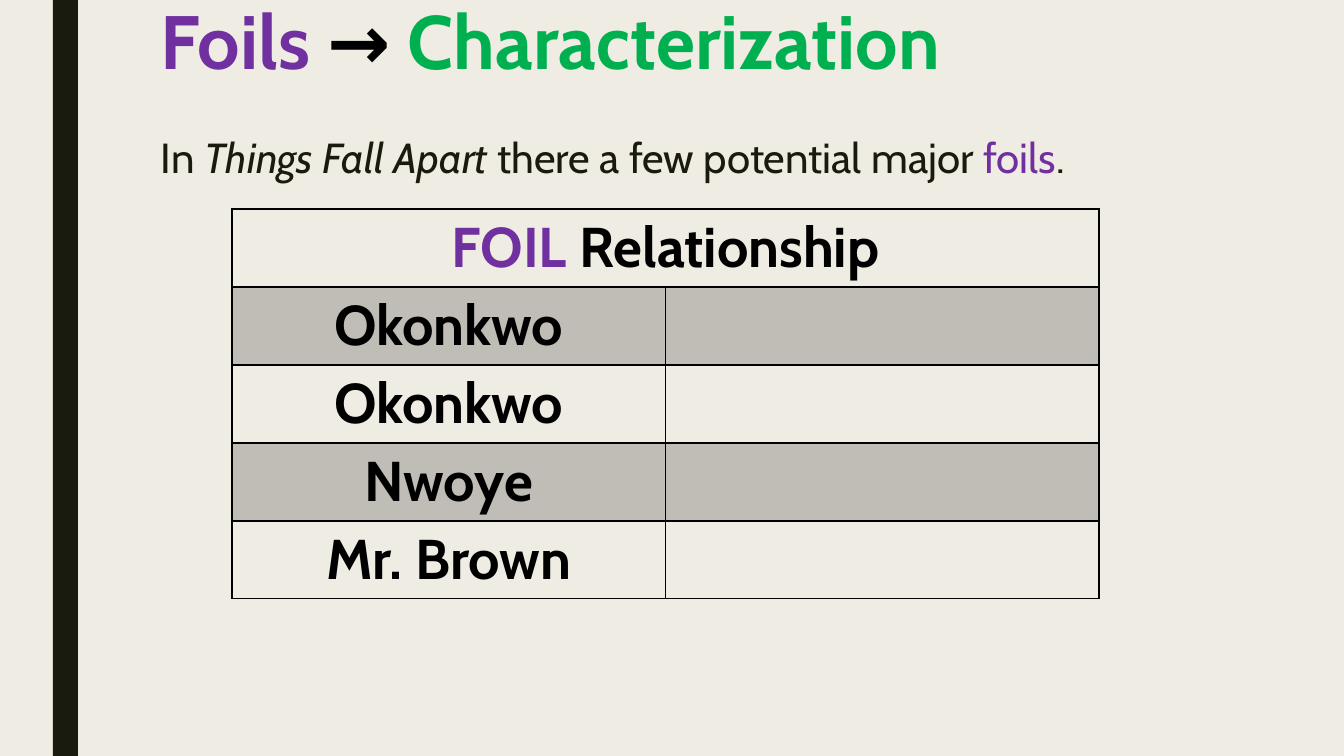
from lxml import etree
from pptx import Presentation
from pptx.dml.color import RGBColor
from pptx.enum.shapes import MSO_SHAPE
from pptx.enum.text import MSO_ANCHOR, PP_ALIGN
from pptx.oxml.ns import qn
from pptx.util import Pt

RECT = MSO_SHAPE.RECTANGLE
TOP = MSO_ANCHOR.TOP
CENTER = PP_ALIGN.CENTER

FONT = "Cabin"
CREAM = RGBColor(0xEF, 0xED, 0xE3)
DARK = RGBColor(0x19, 0x1B, 0x0E)
BLACK = RGBColor(0, 0, 0)
PURPLE = RGBColor(0x70, 0x30, 0xA0)
GREEN = RGBColor(0x00, 0xB0, 0x50)

NAMES = ["Okonkwo", "Okonkwo", "Nwoye", "Mr. Brown"]


def px(n):
    return round(n * 914400 / 100.8)


def write(para, runs, size, bold=False):
    """Fill a paragraph with (text, colour, italic) runs."""
    para.font.name = FONT
    para.font.size = Pt(size)
    para.font.bold = bold
    for text, color, italic in runs:
        run = para.add_run()
        run.text = text
        run.font.color.rgb = color
        run.font.italic = italic


def add_bar(slide, x, y, w, h):
    bar = slide.shapes.add_shape(RECT, px(x), px(y), px(w), px(h))
    bar.shadow.inherit = False
    bar.fill.solid()
    bar.fill.fore_color.rgb = DARK
    bar.line.fill.background()


def add_text(slide, x, y, w, h, runs, size, space, inset=5, bold=False):
    frame = slide.shapes.add_textbox(px(x), px(y), px(w), px(h)).text_frame
    frame.word_wrap = True
    frame.vertical_anchor = TOP
    frame.margin_top = px(inset)
    para = frame.paragraphs[0]
    para.line_spacing = space
    write(para, runs, size, bold)


def set_edges(cell, low):
    """Draw black borders, the bottom one low points wide."""
    props = cell._tc.get_or_add_tcPr()
    widths = {"a:lnL": 1, "a:lnR": 1, "a:lnT": 1, "a:lnB": low}
    for i, (tag, width) in enumerate(widths.items()):
        line = etree.Element(qn(tag), w=str(Pt(width)))
        fill = etree.SubElement(line, qn("a:solidFill"))
        etree.SubElement(fill, qn("a:srgbClr"), val=str(BLACK))
        props.insert(i, line)


def set_fill(cell, shade):
    """Tint the cell with 20% black, or leave it clear."""
    if not shade:
        cell.fill.background()
        return
    cell.fill.solid()
    cell.fill.fore_color.rgb = BLACK
    color = cell._tc.tcPr.find(".//" + qn("a:srgbClr"))
    etree.SubElement(color, qn("a:alpha"), val="20000")


def add_grid(slide, x, y, w, row):
    count = len(NAMES) + 1
    grid = slide.shapes.add_table(
        count, 2, px(x), px(y), px(w), px(row * count)).table
    grid.first_row = grid.horz_banding = False
    for r in range(count):
        for c in range(2):
            cell = grid.cell(r, c)
            set_fill(cell, r % 2 == 1)
            set_edges(cell, 2 if r == 0 else 1)
    head = grid.cell(0, 0)
    head.merge(grid.cell(0, 1))
    rows = [[("FOIL", PURPLE, False), (" Relationship", BLACK, False)]]
    rows += [[(name, BLACK, False)] for name in NAMES]
    for r, runs in enumerate(rows):
        para = grid.cell(r, 0).text_frame.paragraphs[0]
        para.alignment = CENTER
        write(para, runs, 40, True)


def main():
    deck = Presentation()
    deck.slide_width, deck.slide_height = px(1344), px(756)
    slide = deck.slides.add_slide(deck.slide_layouts[6])
    back = slide.background.fill
    back.solid()
    back.fore_color.rgb = CREAM

    add_bar(slide, 53, 0, 25, 756)
    title = [("Foils ", PURPLE, False), ("→ ", BLACK, False),
             ("Characterization", GREEN, False)]
    add_text(slide, 151, 0, 1058, 79, title, 54, 0.89, bold=True)
    body = [("In ", DARK, False), ("Things Fall Apart ", DARK, True),
            ("there a few potential major ", DARK, False),
            ("foils", PURPLE, False), (".", DARK, False)]
    add_text(slide, 151, 79, 1058, 567, body, 30, 0.94, inset=57)
    add_grid(slide, 232, 209, 867, 78)
    deck.save("out.pptx")


if __name__ == "__main__":
    main()
